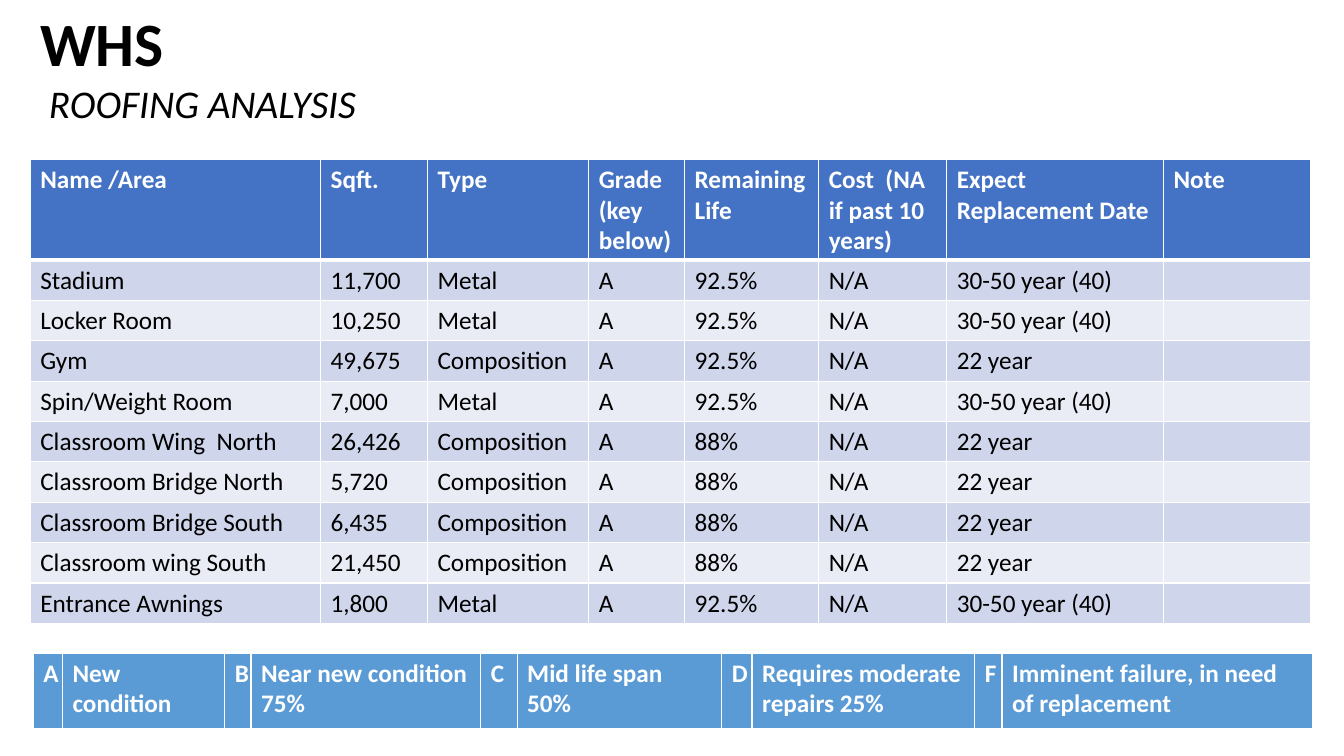
from lxml.etree import SubElement
from pptx import Presentation
from pptx.dml.color import RGBColor
from pptx.enum.text import MSO_AUTO_SIZE
from pptx.oxml.ns import qn
from pptx.util import Inches, Pt

BLACK = RGBColor(0x00, 0x00, 0x00)
WHITE = RGBColor(0xFF, 0xFF, 0xFF)
HEADER_BLUE = RGBColor(0x44, 0x72, 0xC4)
BAND_DARK = RGBColor(0xCF, 0xD5, 0xEA)
BAND_LIGHT = RGBColor(0xE9, 0xEB, 0xF5)
KEY_BLUE = RGBColor(0x5B, 0x9B, 0xD5)


def style_run(font, size, color, bold=False, italic=False):
    font.name = "Calibri"
    font.size = Pt(size)
    font.color.rgb = color
    font.bold = bold
    font.italic = italic


def fill_cell(cell, text, fill, color, bold, top=1, bottom=1):
    cell.text_frame.text = text
    for paragraph in cell.text_frame.paragraphs:
        style_run(paragraph.font, 18, color, bold)
        for run in paragraph.runs:
            style_run(run.font, 18, color, bold)
    # White cell borders
    properties = cell._tc.get_or_add_tcPr()
    for side, width in (("L", 1), ("R", 1), ("T", top), ("B", bottom)):
        border = SubElement(properties, qn(f"a:ln{side}"), w=str(Pt(width)))
        solid = SubElement(border, qn("a:solidFill"))
        SubElement(solid, qn("a:srgbClr"), val=str(WHITE))
    cell.fill.solid()
    cell.fill.fore_color.rgb = fill


presentation = Presentation()
presentation.slide_width = Inches(13.33)
presentation.slide_height = Inches(7.5)
slide = presentation.slides.add_slide(presentation.slide_layouts[6])

# Heading
heading = slide.shapes.add_textbox(Inches(0.3), 0, Inches(3.37), Inches(1.31)).text_frame
heading.word_wrap = False
heading.auto_size = MSO_AUTO_SIZE.SHAPE_TO_FIT_TEXT
heading.text = "WHS\n ROOFING ANALYSIS"
school, subject = heading.paragraphs
style_run(school.runs[0].font, 44, BLACK, bold=True)
style_run(subject.runs[0].font, 28, BLACK, italic=True)

# Roof areas
METAL_LIFE = "30-50 year (40)"
COMPOSITION_LIFE = "22 year"
headers = ["Name /Area", "Sqft.", "Type", "Grade\n(key below)", "Remaining Life",
           "Cost  (NA if past 10 years)", "Expect Replacement Date", "Note"]
areas = [
    ("Stadium", "11,700", "Metal", "92.5%"),
    ("Locker Room", "10,250", "Metal", "92.5%"),
    ("Gym", "49,675", "Composition", "92.5%"),
    ("Spin/Weight Room", "7,000", "Metal", "92.5%"),
    ("Classroom Wing  North", "26,426", "Composition", "88%"),
    ("Classroom Bridge North", "5,720", "Composition", "88%"),
    ("Classroom Bridge South", "6,435", "Composition", "88%"),
    ("Classroom wing South", "21,450", "Composition", "88%"),
    ("Entrance Awnings", "1,800", "Metal", "92.5%"),
]
area_widths = [2.88, 1.06, 1.6, 0.95, 1.33, 1.27, 2.15, 1.46]
roofs = slide.shapes.add_table(len(areas) + 1, len(headers), Inches(0.3), Inches(1.58),
                               Inches(12.7), Inches(4.6)).table
for column, width in zip(roofs.columns, area_widths):
    column.width = Inches(width)
for row in roofs.rows:
    row.height = Inches(0.4)
roofs.rows[0].height = Inches(1)

for col, label in enumerate(headers):
    fill_cell(roofs.cell(0, col), label, HEADER_BLUE, WHITE, True, bottom=3)
for row, (name, sqft, roof_type, remaining) in enumerate(areas, start=1):
    replacement = METAL_LIFE if roof_type == "Metal" else COMPOSITION_LIFE
    band = BAND_DARK if row % 2 else BAND_LIGHT
    values = [name, sqft, roof_type, "A", remaining, "N/A", replacement, ""]
    for col, value in enumerate(values):
        fill_cell(roofs.cell(row, col), value, band, BLACK, False, top=3 if row == 1 else 1)

# Grade key
grades = ["A", "New condition", "B", "Near new condition 75%", "C", "Mid life span 50%",
          "D", "Requires moderate repairs 25%", "F", "Imminent failure, in need of replacement"]
grade_widths = [0.29, 1.61, 0.26, 2.28, 0.36, 2.03, 0.3, 2.21, 0.27, 3.08]
grade_key = slide.shapes.add_table(1, len(grades), Inches(0.33), Inches(6.48),
                                   Inches(12.69), Inches(0.76)).table
for col, (text, width) in enumerate(zip(grades, grade_widths)):
    grade_key.columns[col].width = Inches(width)
    fill_cell(grade_key.cell(0, col), text, KEY_BLUE, WHITE, True, bottom=3)

presentation.save("out.pptx")
